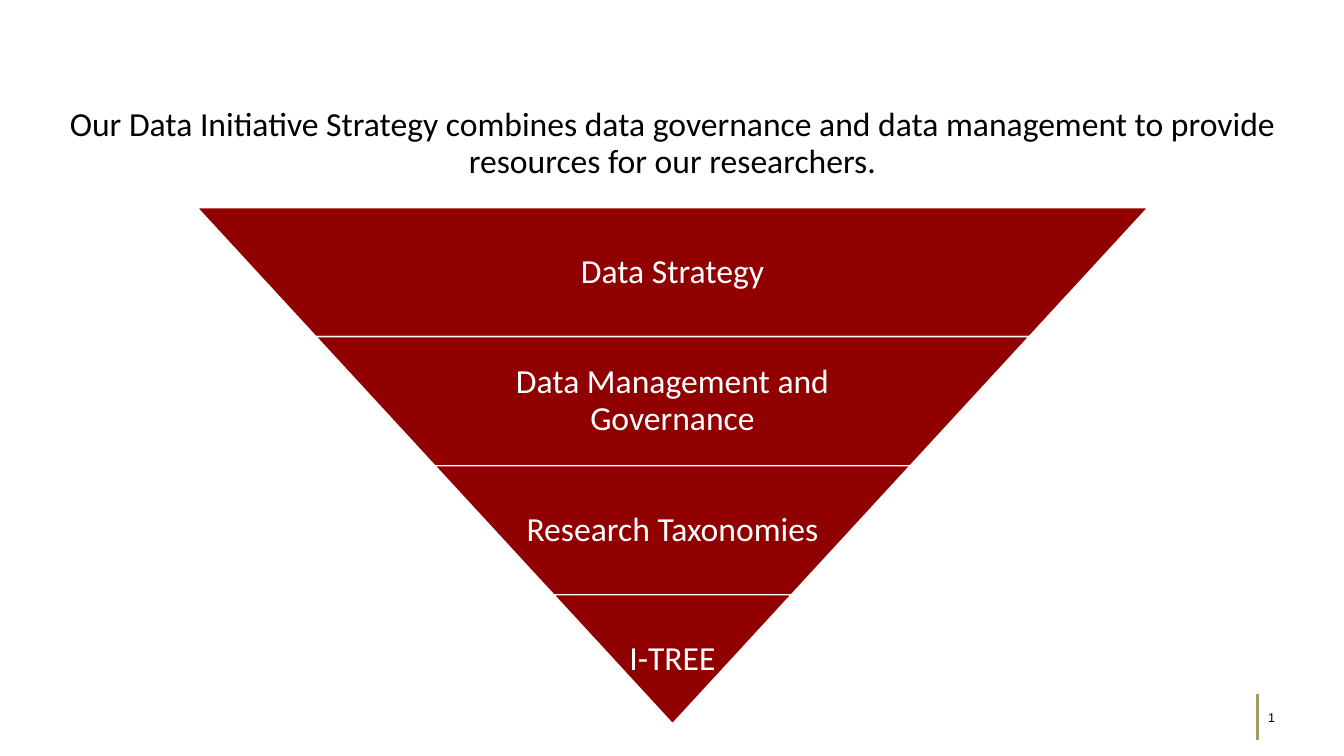
from dataclasses import dataclass

from lxml.etree import SubElement
from pptx import Presentation
from pptx.dml.color import RGBColor
from pptx.enum.shapes import MSO_CONNECTOR, MSO_SHAPE
from pptx.enum.text import MSO_ANCHOR, MSO_AUTO_SIZE, PP_ALIGN
from pptx.oxml import parse_xml
from pptx.oxml.ns import nsdecls, qn
from pptx.util import Inches, Pt


@dataclass(frozen=True)
class Theme:
    band: RGBColor = RGBColor(0x90, 0x00, 0x01)
    rule: RGBColor = RGBColor(0xA5, 0x9A, 0x60)
    dark: RGBColor = RGBColor(0, 0, 0)
    light: RGBColor = RGBColor(0xFF, 0xFF, 0xFF)
    font: str = "Calibri"
    number_font: str = "Arial"
    text_size: Pt = Pt(24)
    number_size: Pt = Pt(9)


THEME = Theme()

STATEMENT = ("Our Data Initiative Strategy combines data governance and data "
             "management to provide resources for our researchers.")

# Band label and the share of the band's width that its text may fill
BANDS = [
    ("Data Strategy", 0.65),
    ("Data Management and Governance", 0.65),
    ("Research Taxonomies", 0.65),
    ("I-TREE", 1),
]
FUNNEL_CENTER, FUNNEL_TOP = 6.67, 2.06
FUNNEL_WIDTH, BAND_HEIGHT = 9.43, 1.28


def set_all(target, formats):
    for name, value in formats.items():
        setattr(target, name, value)


def box(left, top, width, height):
    return [Inches(v) for v in (left, top, width, height)]


def write(tf, text, color):
    set_all(tf, {"word_wrap": True, "auto_size": MSO_AUTO_SIZE.NONE,
                 "vertical_anchor": MSO_ANCHOR.MIDDLE})
    p = tf.paragraphs[0]
    set_all(p, {"alignment": PP_ALIGN.CENTER, "line_spacing": 0.9})
    r = p.add_run()
    r.text = text
    set_all(r.font, {"name": THEME.font, "size": THEME.text_size})
    r.font.color.rgb = color


def add_statement(s):
    title = s.shapes.title
    edges = ("left", "top", "width", "height")
    set_all(title, dict(zip(edges, box(0.33, 0.8, 12.68, 1.26))))
    write(title.text_frame, STATEMENT, THEME.dark)


def add_band(s, top, width, inset, label, share):
    # An upside-down trapezoid, with its label upright in a box above it
    sp = s.shapes.add_shape(MSO_SHAPE.TRAPEZOID, *box(
        FUNNEL_CENTER - width / 2, top, width, BAND_HEIGHT))
    sp.rotation = 180
    sp.adjustments[0] = inset / BAND_HEIGHT
    sp.shadow.inherit = False
    sp.fill.solid()
    sp.fill.fore_color.rgb = THEME.band
    sp.line.color.rgb = THEME.light
    sp.line.width = Pt(1)

    text_width = width * share
    tf = s.shapes.add_textbox(*box(
        FUNNEL_CENTER - text_width / 2, top, text_width, BAND_HEIGHT)).text_frame
    margins = ("margin_left", "margin_top", "margin_right", "margin_bottom")
    set_all(tf, dict.fromkeys(margins, Inches(0.03)))
    write(tf, label, THEME.light)


def add_funnel(s):
    # Equal steps bring the last band to a point
    inset = FUNNEL_WIDTH / len(BANDS) / 2
    for i, (label, share) in enumerate(BANDS):
        add_band(s, FUNNEL_TOP + i * BAND_HEIGHT, FUNNEL_WIDTH - 2 * inset * i,
                 inset, label, share)


def add_page_number(s):
    rule = s.shapes.add_connector(MSO_CONNECTOR.STRAIGHT, *box(12.47, 6.89, 12.47, 7.34))
    rule.line.color.rgb = THEME.rule
    rule.line.width = Pt(2)
    SubElement(rule.element.spPr, qn("a:effectLst"))

    tf = s.shapes.add_textbox(*box(12.48, 6.98, 0.52, 0.27)).text_frame
    set_all(tf, {"word_wrap": True, "vertical_anchor": MSO_ANCHOR.MIDDLE})
    p = tf.paragraphs[0]
    # Live slide-number field
    field = parse_xml(
        f'<a:fld {nsdecls("a")} id="{{B6F15528-21DE-4FAA-801E-634DDDAF4B2B}}" '
        f'type="slidenum"><a:rPr lang="en-US" sz="{int(THEME.number_size.pt * 100)}">'
        f'<a:solidFill><a:srgbClr val="{THEME.dark}"/></a:solidFill>'
        f'<a:latin typeface="{THEME.number_font}"/></a:rPr><a:t>1</a:t></a:fld>')
    p._p.append(field)


def main():
    prs = Presentation()
    set_all(prs, {"slide_width": Inches(13.33), "slide_height": Inches(7.5)})
    s = prs.slides.add_slide(prs.slide_layouts.get_by_name("Title Only"))
    add_page_number(s)
    add_statement(s)
    add_funnel(s)
    prs.save("out.pptx")


if __name__ == "__main__":
    main()
